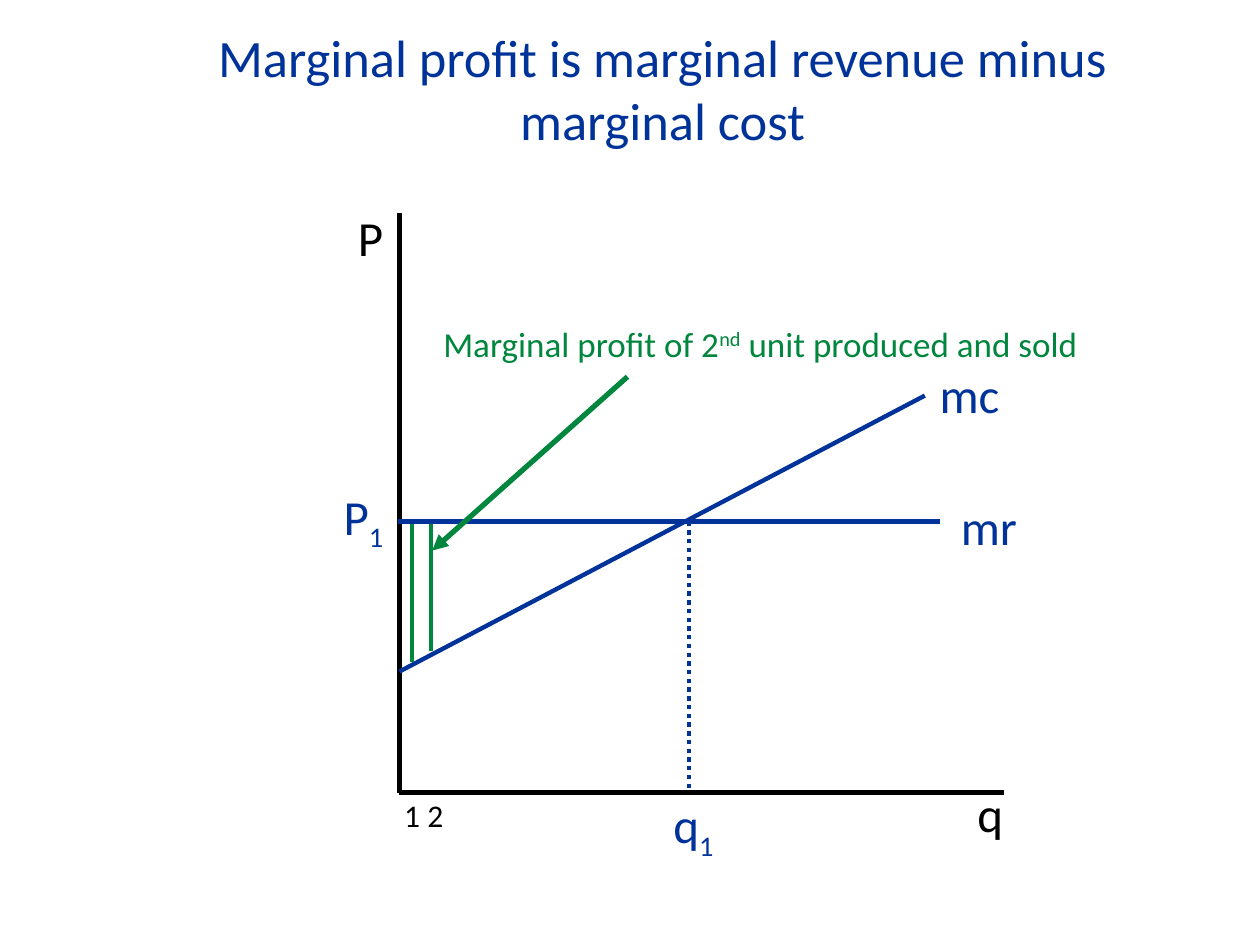
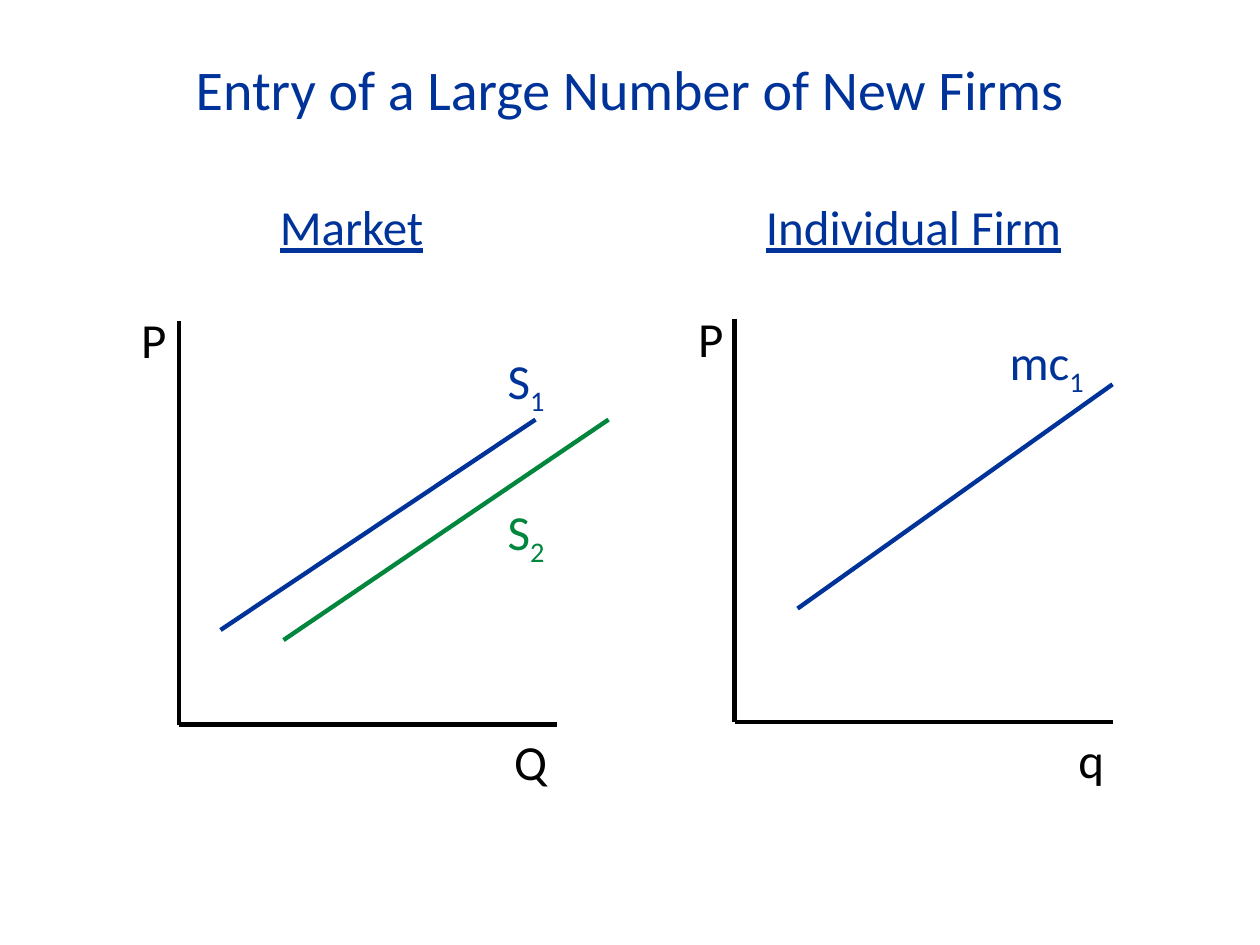
import dataclasses

import pptx
import pptx.dml.color
import pptx.enum.dml
import pptx.enum.shapes
import pptx.enum.text
import pptx.oxml
import pptx.oxml.ns
import pptx.util
from pptx.util import Inches

Align = pptx.enum.text.PP_ALIGN
Anchor = pptx.enum.text.MSO_ANCHOR


@dataclasses.dataclass(frozen=True)
class Theme:
    font: str = "Calibri"
    axis: str = "000000"
    curve: str = "003399"
    accent: str = "00863D"
    title_long: int = 30
    title: int = 32
    label: int = 28
    note: int = 20
    tick: int = 18
    stroke: float = 2.5
    arrow: float = 3
    subscript: int = -25
    superscript: int = 30


theme = Theme()


def add_line(slide, start, end, color, weight=theme.stroke, dash=None, arrow=False):
    ends = [Inches(v) for v in (*start, *end)]
    connector = slide.shapes.add_connector(pptx.enum.shapes.MSO_CONNECTOR.STRAIGHT, *ends)
    connector.line.color.rgb = pptx.dml.color.RGBColor.from_string(color)
    for name, value in {"width": pptx.util.Pt(weight), "dash_style": dash}.items():
        setattr(connector.line, name, value)
    if arrow:
        head = pptx.oxml.parse_xml(f'<a:tailEnd {pptx.oxml.ns.nsdecls("a")} type="triangle"/>')
        connector.line._get_or_add_ln().append(head)
    effects = pptx.oxml.parse_xml(f'<a:effectLst {pptx.oxml.ns.nsdecls("a")}/>')
    connector._element.spPr.append(effects)


def add_label(slide, box, parts, color, size=theme.label, align=Align.RIGHT,
              shift=theme.subscript, anchor=Anchor.TOP, underline=None, wrap=True):
    frame = slide.shapes.add_textbox(*[Inches(v) for v in box]).text_frame
    frame_format = {
        "word_wrap": wrap,
        "vertical_anchor": anchor,
        "auto_size": pptx.enum.text.MSO_AUTO_SIZE.SHAPE_TO_FIT_TEXT,
    }
    for name, value in frame_format.items():
        setattr(frame, name, value)
    paragraph = frame.paragraphs[0]
    paragraph.alignment = align
    font_format = {"name": theme.font, "size": pptx.util.Pt(size), "underline": underline}
    for index, text in enumerate(parts):
        run = paragraph.add_run()
        run.text = text
        for name, value in font_format.items():
            setattr(run.font, name, value)
        run.font.color.rgb = pptx.dml.color.RGBColor.from_string(color)
        if index == 1:
            run._r.get_or_add_rPr().set("baseline", str(shift * 1000))


deck = pptx.Presentation()
deck.slide_width, deck.slide_height = Inches(10), Inches(7.5)
blank = deck.slide_layouts[6]
profit = deck.slides.add_slide(blank)
entry = deck.slides.add_slide(blank)

titles = [
    (profit, (0.96, 0.14, 8.6, 1.11), theme.title_long,
     "Marginal profit is marginal revenue minus marginal cost"),
    (entry, (0.7, 0.38, 8.6, 0.64), theme.title, "Entry of a Large Number of New Firms"),
]
for slide, box, size, text in titles:
    add_label(slide, box, [text], theme.curve, size, Align.CENTER, anchor=Anchor.MIDDLE)

diagrams = [
    (profit, (3.17, 6.29), 4.8, 4.6, (2.07, 1.6, 1.07, 0.57), "q", (7.35, 6.17, 0.71, 0.57)),
    (entry, (1.42, 5.75), 3, 3.2, (0.25, 2.41, 1.17, 0.57), "Q", (3.46, 5.76, 0.98, 0.57)),
    (entry, (5.83, 5.73), 3, 3.2, (4.67, 2.4, 1.17, 0.57), "q", (7.88, 5.74, 0.98, 0.57)),
]
for slide, (x, y), width, height, price_box, quantity, quantity_box in diagrams:
    add_line(slide, (x, y - height), (x, y), theme.axis)
    add_line(slide, (x, y), (x + width, y), theme.axis)
    add_label(slide, price_box, ["P"], theme.axis)
    add_label(slide, quantity_box, [quantity], theme.axis)

curves = [
    (profit, (3.16, 4.14), (7.46, 4.14), theme.curve),
    (profit, (3.17, 5.33), (7.34, 3.14), theme.curve),
    (profit, (3.27, 4.16), (3.27, 5.25), theme.accent),
    (profit, (3.42, 4.16), (3.42, 5.17), theme.accent),
    (entry, (1.75, 5), (4.25, 3.33), theme.curve),
    (entry, (2.25, 5.08), (4.83, 3.33), theme.accent),
    (entry, (6.33, 4.83), (8.83, 3.05), theme.curve),
]
for curve in curves:
    add_line(*curve)
add_line(profit, (5.47, 4.14), (5.47, 6.28), theme.curve,
         dash=pptx.enum.dml.MSO_LINE.ROUND_DOT)
add_line(profit, (4.98, 2.99), (3.43, 4.37), theme.accent, theme.arrow, arrow=True)

curve_labels = [
    (profit, (6.08, 2.84, 1.95, 0.57), ["mc"], theme.curve),
    (profit, (7.19, 3.89, 0.98, 0.57), ["mr"], theme.curve),
    (profit, (1.94, 3.81, 1.2, 0.57), ["P", "1"], theme.curve),
    (profit, (5.05, 6.26, 0.71, 0.57), ["q", "1"], theme.curve),
    (entry, (7.42, 2.58, 1.28, 0.57), ["mc", "1"], theme.curve),
    (entry, (1.5, 2.73, 2.92, 0.57), ["S", "1"], theme.curve),
    (entry, (1.5, 3.93, 2.92, 0.57), ["S", "2"], theme.accent),
]
for curve_label in curve_labels:
    add_label(*curve_label)

add_label(profit, (3.42, 2.51, 5.3, 0.44),
          ["Marginal profit of 2", "nd", " unit produced and sold"],
          theme.accent, theme.note, Align.LEFT, theme.superscript, wrap=False)
add_label(profit, (3.11, 6.27, 0.81, 0.41), ["1 2"], theme.axis, theme.tick, Align.LEFT)

headings = [("Market", (0.83, 1.51, 3.92, 0.57)), ("Individual Firm", (5.89, 1.51, 2.72, 0.57))]
for heading, box in headings:
    add_label(entry, box, [heading], theme.curve, align=Align.CENTER, underline=True)

deck.save("out.pptx")
